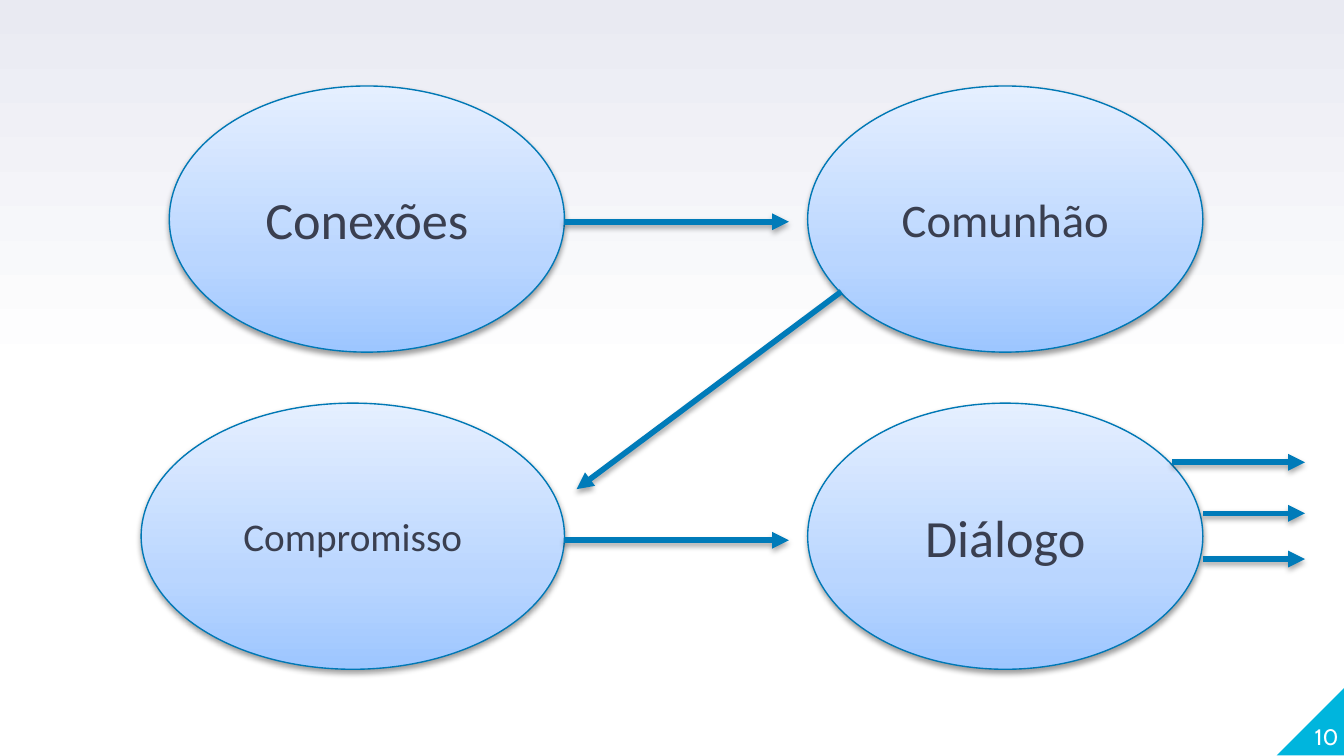
from copy import deepcopy

from lxml.etree import SubElement
from pptx import Presentation
from pptx.dml.color import RGBColor
from pptx.enum.shapes import MSO_CONNECTOR, MSO_SHAPE
from pptx.enum.text import MSO_ANCHOR, PP_ALIGN
from pptx.oxml.ns import qn
from pptx.util import Inches, Pt

WHITE = RGBColor(0xFF, 0xFF, 0xFF)
LAVENDER = RGBColor(0xE9, 0xEA, 0xF2)
SKY = RGBColor(0x9D, 0xC6, 0xFF)
PALE_SKY = RGBColor(0xBA, 0xD6, 0xFF)
ICE = RGBColor(0xE5, 0xEF, 0xFF)
OUTLINE = RGBColor(0x00, 0x78, 0xB5)
ARROW = RGBColor(0x00, 0x7B, 0xB9)
CORNER = RGBColor(0x00, 0xB5, 0xDD)
INK = RGBColor(0x3A, 0x3F, 0x50)

BACKGROUND_STOPS = [(0, WHITE), (0.5, WHITE), (1, LAVENDER)]
ELLIPSE_STOPS = [(0, SKY), (0.35, PALE_SKY), (1, ICE)]

SLIDE_WIDTH = 10
SLIDE_HEIGHT = SLIDE_WIDTH * 9 / 16
TOP_ROW, BOTTOM_ROW = 0.64, 3
RIGHT_COLUMN = 6.01
ELLIPSE_WIDTH, ELLIPSE_HEIGHT = 2.94, 1.98
LEFT_EDGE, RIGHT_EDGE = 4.2, 8.95  # right sides of the two columns
LINK_END, EXIT_END = 5.87, 9.71

# label, left, top, width, font size
ELLIPSES = [
    ("Diálogo", RIGHT_COLUMN, BOTTOM_ROW, ELLIPSE_WIDTH, 28),
    ("Conexões", 1.26, TOP_ROW, ELLIPSE_WIDTH, 28),
    ("Compromisso", 1.05, BOTTOM_ROW, 3.15, 21),
    ("Comunhão", RIGHT_COLUMN, TOP_ROW, ELLIPSE_WIDTH, 25),
]

# start x, start y, end x, end y
ARROWS = [
    (LEFT_EDGE, 1.65, LINK_END, 1.65),
    (6.26, 2.17, 4.29, 3.64),
    (LEFT_EDGE, 4.02, LINK_END, 4.02),
    (8.72, 3.44, EXIT_END, 3.44),
    (RIGHT_EDGE, 3.82, EXIT_END, 3.82),
    (RIGHT_EDGE, 4.16, EXIT_END, 4.16),
]


def fill_upwards(fill, owner, stops):
    """Apply a three-stop gradient from bottom to top; owner holds the fill's XML."""
    fill.gradient()
    fill.gradient_angle = 90
    stop_list = owner.xpath(".//a:gsLst")[0]
    stop_list.append(deepcopy(stop_list[-1]))
    for stop, (position, color) in zip(fill.gradient_stops, stops):
        stop.position = position
        stop.color.rgb = color


def add_drop_shadow(shape, distance, opacity):
    effects = SubElement(shape.element.spPr, qn("a:effectLst"))
    shadow = SubElement(
        effects, qn("a:outerShdw"), blurRad=str(Pt(3.1)),
        dist=str(Pt(distance)), dir="5400000", rotWithShape="0")
    color = SubElement(shadow, qn("a:srgbClr"), val="000000")
    SubElement(color, qn("a:alpha"), val=str(opacity * 1000))


def write_text(frame, text, size, font_name, color, alignment, anchor):
    frame.text = text
    frame.word_wrap = True
    frame.vertical_anchor = anchor
    paragraph = frame.paragraphs[0]
    paragraph.alignment = alignment
    font = paragraph.runs[0].font
    font.size = Pt(size)
    font.name = font_name
    font.color.rgb = color


def add_ellipse(slide, label, left, top, width, size):
    ellipse = slide.shapes.add_shape(
        MSO_SHAPE.OVAL, Inches(left), Inches(top),
        Inches(width), Inches(ELLIPSE_HEIGHT))
    fill_upwards(ellipse.fill, ellipse.element, ELLIPSE_STOPS)
    ellipse.line.color.rgb = OUTLINE
    ellipse.line.width = Pt(0.75)
    add_drop_shadow(ellipse, 1.6, 38)
    write_text(ellipse.text_frame, label, size, "Calibri", INK,
               PP_ALIGN.CENTER, MSO_ANCHOR.MIDDLE)


def add_arrow(slide, *ends):
    arrow = slide.shapes.add_connector(
        MSO_CONNECTOR.STRAIGHT, *(Inches(end) for end in ends))
    arrow.line.color.rgb = ARROW
    arrow.line.width = Pt(3)
    SubElement(arrow.element.spPr.find(qn("a:ln")), qn("a:tailEnd"), type="triangle")
    add_drop_shadow(arrow, 1.8, 35)


def add_page_corner(slide, number):
    corner = slide.shapes.add_shape(
        MSO_SHAPE.RIGHT_TRIANGLE, Inches(9.5), Inches(5.11), Inches(0.51), Inches(0.51))
    corner.element.spPr.find(qn("a:xfrm")).set("flipH", "1")
    corner.fill.solid()
    corner.fill.fore_color.rgb = CORNER
    corner.line.fill.background()
    corner.shadow.inherit = False

    frame = slide.shapes.add_textbox(
        Inches(9.46), Inches(5.07), Inches(0.5), Inches(0.51)).text_frame
    frame.margin_left = frame.margin_right = frame.margin_top = frame.margin_bottom = 0
    write_text(frame, number, 12, "Cabin", WHITE, PP_ALIGN.RIGHT, MSO_ANCHOR.BOTTOM)


def main():
    presentation = Presentation()
    presentation.slide_width = Inches(SLIDE_WIDTH)
    presentation.slide_height = Inches(SLIDE_HEIGHT)
    slide = presentation.slides.add_slide(presentation.slide_layouts[6])
    fill_upwards(slide.background.fill, slide.element, BACKGROUND_STOPS)
    add_page_corner(slide, "10")
    for ellipse in ELLIPSES:
        add_ellipse(slide, *ellipse)
    for arrow in ARROWS:
        add_arrow(slide, *arrow)
    presentation.save("out.pptx")


if __name__ == "__main__":
    main()
